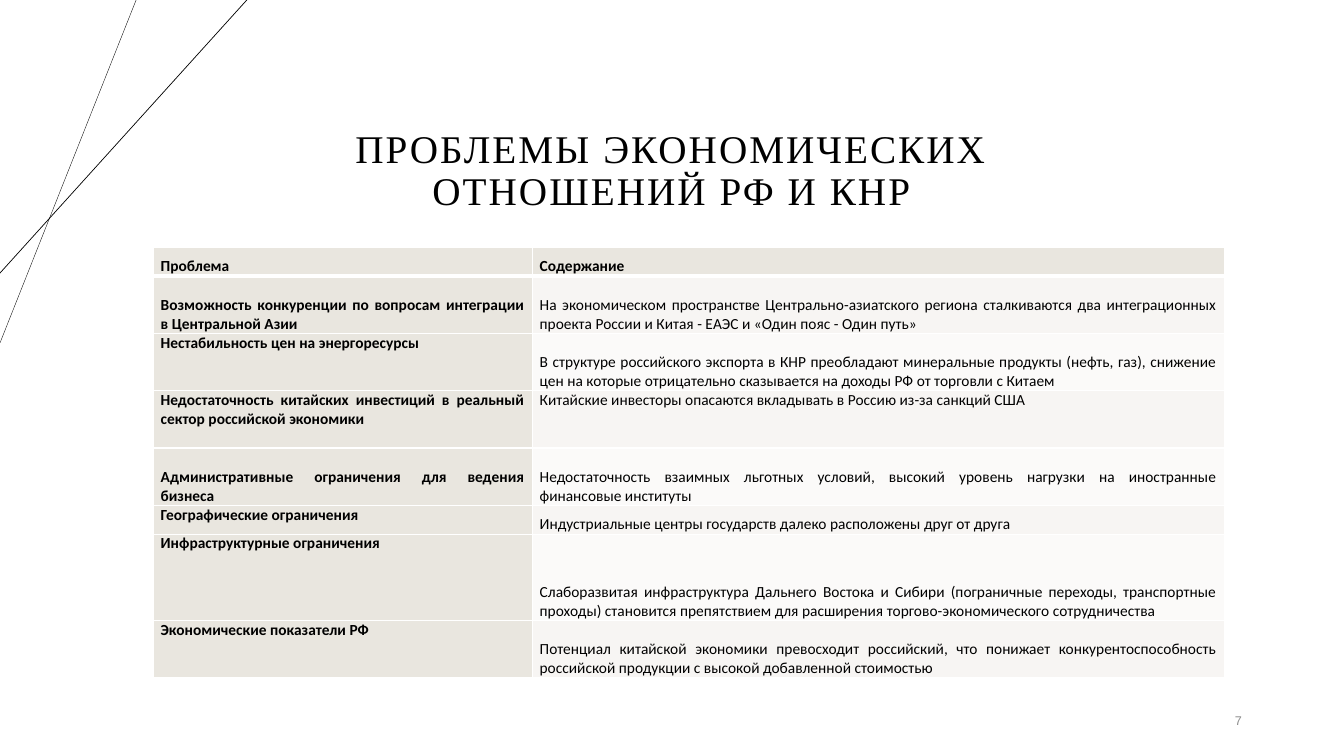
from dataclasses import dataclass
from typing import NamedTuple

from lxml import etree
from pptx import Presentation
from pptx import util as u
from pptx.dml.color import RGBColor
from pptx.enum import shapes, text
from pptx.oxml.ns import qn

Cm, Pt = u.Cm, u.Pt
ALIGN, ANCHOR = text.PP_ALIGN, text.MSO_ANCHOR
TOP, LOW = ANCHOR.TOP, ANCHOR.BOTTOM


@dataclass(frozen=True)
class Theme:
    ink: str = "000000"
    grey: str = "8C8C8C"
    rule: str = "FFFFFF"
    key: str = "E9E6DF"
    odd: str = "F7F5F3"
    even: str = "FBFAF9"
    head: float = 28
    body: float = 11
    note: float = 9
    serif: str = "Times New Roman"
    sans: str = "Calibri"
    plain: str = "Arial"


class Ray(NamedTuple):
    x: float
    y: float
    width: float


class Row(NamedTuple):
    lines: int
    issue: str
    detail: str
    left: ANCHOR = TOP
    right: ANCHOR = LOW


THEME = Theme()
RAYS = [Ray(3.43, 8.64, 0.25), Ray(6.22, 6.88, 0.5)]
WIDTHS = [9.55, 17.45]
LINE = 10.85 / 15
ROWS = [
    Row(1, "Проблема", "Содержание", LOW),
    Row(2, "Возможность конкуренции по вопросам интеграции в Центральной Азии",
        "На экономическом пространстве Центрально-азиатского региона сталкиваются "
        "два интеграционных проекта России и Китая - ЕАЭС и «Один пояс - Один путь»", LOW),
    Row(2, "Нестабильность цен на энергоресурсы",
        "В структуре российского экспорта в КНР преобладают минеральные продукты "
        "(нефть, газ), снижение цен на которые отрицательно сказывается на доходы РФ "
        "от торговли с Китаем"),
    Row(2, "Недостаточность китайских инвестиций в реальный сектор российской экономики",
        "Китайские инвесторы опасаются вкладывать в Россию из-за санкций США", TOP, TOP),
    Row(2, "Административные ограничения для ведения бизнеса",
        "Недостаточность взаимных льготных условий, высокий уровень нагрузки "
        "на иностранные финансовые институты", LOW),
    Row(1, "Географические ограничения",
        "Индустриальные центры государств далеко расположены друг от друга"),
    Row(3, "Инфраструктурные ограничения",
        "Слаборазвитая инфраструктура Дальнего Востока и Сибири (пограничные переходы, "
        "транспортные проходы) становится препятствием для расширения "
        "торгово-экономического сотрудничества"),
    Row(2, "Экономические показатели РФ",
        "Потенциал китайской экономики превосходит российский, что понижает "
        "конкурентоспособность российской продукции с высокой добавленной стоимостью"),
]


def write(frame, words: str, *, size: float, font: str, color: str = THEME.ink,
          bold: bool = False, align=ALIGN.JUSTIFY, space: float = 1, track: float = 0) -> None:
    frame.word_wrap = True
    par = frame.paragraphs[0]
    par.alignment = align
    par.line_spacing = space
    run = par.add_run()
    run.text = words
    run.font.size = Pt(size)
    run.font.name = font
    run.font.bold = bold
    run.font.color.rgb = RGBColor.from_string(color)
    if track:
        run._r.get_or_add_rPr().set("spc", str(int(track * 100)))


def edge(cell, side: str, width: float) -> None:
    line = etree.SubElement(cell._tc.get_or_add_tcPr(), qn(f"a:ln{side}"), w=str(Pt(width)))
    fill = etree.SubElement(line, qn("a:solidFill"))
    etree.SubElement(fill, qn("a:srgbClr"), val=THEME.rule)


def draw_ray(slide, ray: Ray) -> None:
    line = slide.shapes.add_connector(
        shapes.MSO_CONNECTOR.STRAIGHT, Cm(ray.x), 0, 0, Cm(ray.y))
    line.line.width = Pt(ray.width)
    line.line.color.rgb = RGBColor.from_string(THEME.ink)
    etree.SubElement(line._element.spPr, qn("a:effectLst"))


def draw_title(slide) -> None:
    title = slide.shapes.title
    title.left, title.top, title.width, title.height = Cm(5.23), Cm(2.49), Cm(23.39), Cm(3.68)
    frame = title.text_frame
    frame.auto_size = text.MSO_AUTO_SIZE.NONE
    frame.vertical_anchor = ANCHOR.MIDDLE
    write(frame, "ПРОБЛЕМЫ ЭКОНОМИЧЕСКИХ ОТНОШЕНИЙ РФ И КНР", size=THEME.head,
          font=THEME.serif, align=ALIGN.CENTER, space=0.9, track=1.5)


def fill_cell(cell, words: str, anchor: ANCHOR, row: int, col: int) -> None:
    cell.margin_left = cell.margin_right = Cm(0.19)
    cell.margin_top = cell.margin_bottom = 0
    cell.vertical_anchor = anchor
    for side in "LRTB":
        thick = (row, side) in ((0, "B"), (1, "T"))
        edge(cell, side, 3 if thick else 1)
    key = row == 0 or col == 0
    tint = THEME.key if key else THEME.odd if row % 2 else THEME.even
    cell.fill.solid()
    cell.fill.fore_color.rgb = RGBColor.from_string(tint)
    write(cell.text_frame, words, size=THEME.body, font=THEME.sans, bold=key)


def draw_table(slide, rows: list[Row]) -> None:
    tall = LINE * sum(row.lines for row in rows)
    table = slide.shapes.add_table(
        len(rows), len(WIDTHS), Cm(3.86), Cm(6.23), Cm(sum(WIDTHS)), Cm(tall)).table
    table.first_row = table.horz_banding = False
    for col, width in zip(table.columns, WIDTHS):
        col.width = Cm(width)
    for i, row in enumerate(rows):
        table.rows[i].height = Cm(LINE * row.lines)
        fill_cell(table.cell(i, 0), row.issue, row.left, i, 0)
        fill_cell(table.cell(i, 1), row.detail, row.right, i, 1)


def draw_number(slide) -> None:
    box = slide.shapes.add_textbox(Cm(23.93), Cm(17.65), Cm(7.62), Cm(1.02))
    box.text_frame.vertical_anchor = ANCHOR.MIDDLE
    write(box.text_frame, "7", size=THEME.note, font=THEME.plain,
          color=THEME.grey, align=ALIGN.RIGHT)


def main() -> None:
    deck = Presentation()
    deck.slide_width, deck.slide_height = Cm(33.87), Cm(19.05)
    slide = deck.slides.add_slide(deck.slide_layouts.get_by_name("Title Only"))
    for ray in RAYS:
        draw_ray(slide, ray)
    draw_title(slide)
    draw_number(slide)
    draw_table(slide, ROWS)
    deck.save("out.pptx")


if __name__ == "__main__":
    main()
